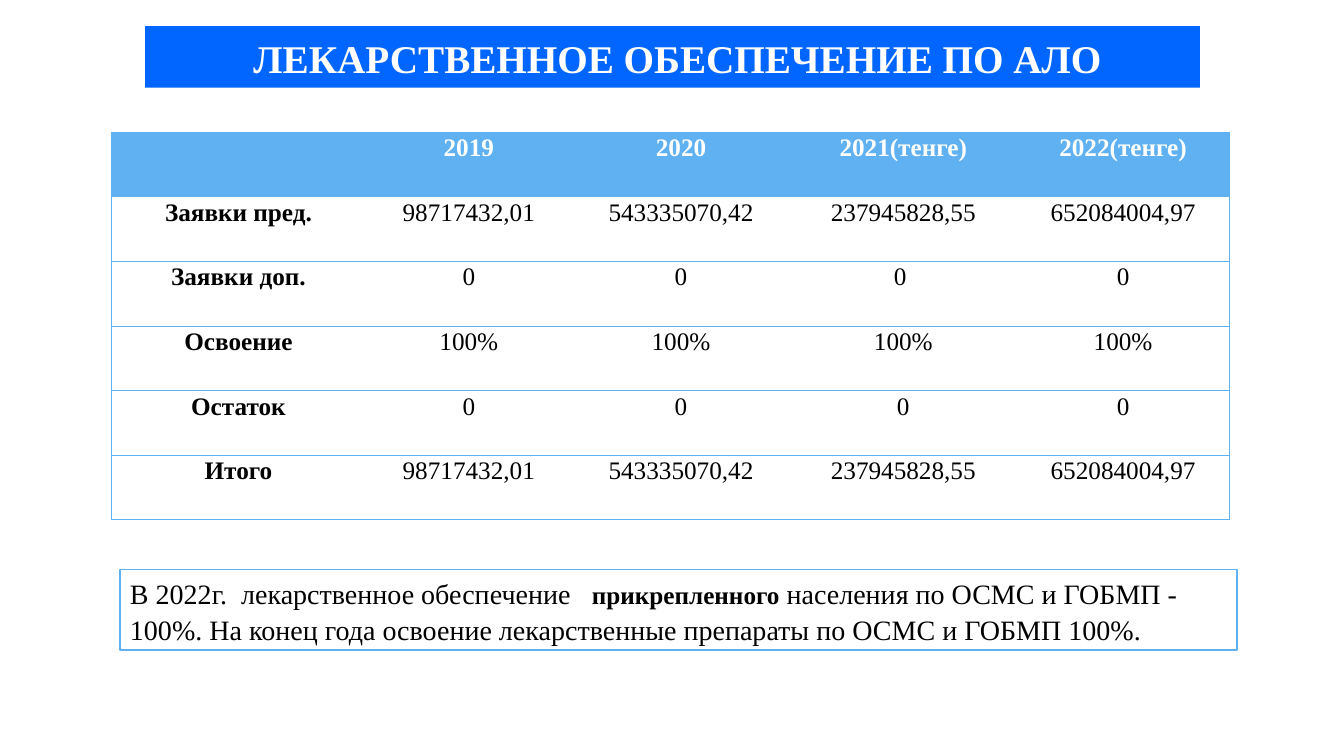
from dataclasses import dataclass
from typing import Any

from lxml.etree import SubElement
from pptx import Presentation
from pptx.dml.color import RGBColor
from pptx.enum.shapes import MSO_SHAPE
from pptx.enum.text import MSO_ANCHOR, MSO_AUTO_SIZE, PP_ALIGN
from pptx.oxml.ns import qn
from pptx.util import Inches, Pt

WIDTH, HEIGHT = Inches(13.33), Inches(7.5)
FONT = "Times New Roman"
SKY, BLUE, WHITE, BLACK = "60B1F2", "0066FF", "FFFFFF", "000000"


@dataclass(frozen=True)
class Box:
    left: float
    top: float
    width: float
    height: float

    def emu(self) -> tuple[int, int, int, int]:
        return across(self.left), down(self.top), across(self.width), down(self.height)


@dataclass(frozen=True)
class Run:
    text: str
    size: float
    color: str = BLACK
    bold: bool = False


TITLE_BOX = Box(10.8, 3.47, 78.47, 8.13)
TABLE_BOX = Box(8.33, 17.47, 83.12, 51.33)
NOTE_BOX = Box(8.93, 75.33, 83.12, 10.67)
COLUMNS = (18.83, 15.45, 16.13, 16.95, 15.76)

REQUESTS = ["98717432,01", "543335070,42", "237945828,55", "652084004,97"]
ROWS = [
    ["", "2019", "2020", "2021(тенге)", "2022(тенге)"],
    ["Заявки пред.", *REQUESTS],
    ["Заявки доп.", "0", "0", "0 ", "0"],
    ["Освоение", *["100%"] * 4],
    ["Остаток", *["0"] * 4],
    ["Итого", *REQUESTS],
]
TITLE = [
    Run(" ", 28, WHITE),
    Run("ЛЕКАРСТВЕННОЕ ОБЕСПЕЧЕНИЕ ПО АЛО", 28, WHITE, True),
]
NOTE = [
    Run("В 2022г.  лекарственное обеспечение   ", 20),
    Run("прикрепленного", 18, bold=True),
    Run(" населения по ОСМС и ГОБМП - 100%. На конец года освоение "
        "лекарственные препараты по ОСМС и ГОБМП 100%.", 20),
]


def across(percent: float) -> int:
    return round(WIDTH * percent / 100)


def down(percent: float) -> int:
    return round(HEIGHT * percent / 100)


def rgb(color: str) -> RGBColor:
    return RGBColor.from_string(color)


def apply(target: Any, values: dict[str, Any]) -> None:
    for name, value in values.items():
        setattr(target, name, value)


def paint(target: Any, color: str) -> None:
    target.fill.solid()
    target.fill.fore_color.rgb = rgb(color)


def write(tf: Any, runs: list[Run], align: PP_ALIGN, after: float = 0) -> None:
    p = tf.paragraphs[0]
    apply(p, {"alignment": align, "line_spacing": 1.07,
              "space_before": Pt(0), "space_after": Pt(after)})
    for run in runs:
        r = p.add_run()
        r.text = run.text
        apply(r.font, {"name": FONT, "size": Pt(run.size), "bold": run.bold})
        r.font.color.rgb = rgb(run.color)


def fill_box(sp: Any, runs: list[Run], align: PP_ALIGN, color: str) -> None:
    paint(sp, color)
    tf = sp.text_frame
    apply(tf, {"word_wrap": True, "auto_size": MSO_AUTO_SIZE.NONE,
               "vertical_anchor": MSO_ANCHOR.TOP})
    write(tf, runs, align, 8)


def add_border(cell: Any, side: str, visible: bool) -> None:
    ln = SubElement(cell._tc.get_or_add_tcPr(), qn(f"a:ln{side}"), w=str(Pt(0.75)))
    if visible:
        fill = SubElement(ln, qn("a:solidFill"))
        SubElement(fill, qn("a:srgbClr"), val=SKY)
    else:
        SubElement(ln, qn("a:noFill"))


def add_title(s: Any) -> None:
    sp = s.shapes.title
    apply(sp, dict(zip(("left", "top", "width", "height"), TITLE_BOX.emu())))
    fill_box(sp, TITLE, PP_ALIGN.CENTER, BLUE)


def add_note(s: Any) -> None:
    sp = s.shapes.add_shape(MSO_SHAPE.RECTANGLE, *NOTE_BOX.emu())
    sp.shadow.inherit = False
    sp.line.color.rgb = rgb(SKY)
    sp.line.width = Pt(1)
    fill_box(sp, NOTE, PP_ALIGN.LEFT, WHITE)


def add_supply_table(s: Any) -> None:
    last = len(COLUMNS) - 1
    table = s.shapes.add_table(len(ROWS), len(COLUMNS), *TABLE_BOX.emu()).table
    table.horz_banding = False
    for column, width in zip(table.columns, COLUMNS):
        column.width = across(width)
    for i, values in enumerate(ROWS):
        table.rows[i].height = down(TABLE_BOX.height / len(ROWS))
        for j, value in enumerate(values):
            cell = table.cell(i, j)
            apply(cell, {"margin_left": Inches(0.07), "margin_right": Inches(0.07),
                         "margin_top": 0, "margin_bottom": 0})
            borders = {"L": j == 0, "R": j == last, "T": True, "B": True}
            for side, visible in borders.items():
                add_border(cell, side, visible)
            paint(cell, WHITE if i else SKY)
            if value:
                run = Run(value, 18, BLACK if i else WHITE, i == 0 or j == 0)
                write(cell.text_frame, [run], PP_ALIGN.CENTER)


def main() -> None:
    prs = Presentation()
    apply(prs, {"slide_width": WIDTH, "slide_height": HEIGHT})
    s = prs.slides.add_slide(prs.slide_layouts[5])
    add_note(s)
    add_supply_table(s)
    add_title(s)
    prs.save("out.pptx")


if __name__ == "__main__":
    main()
